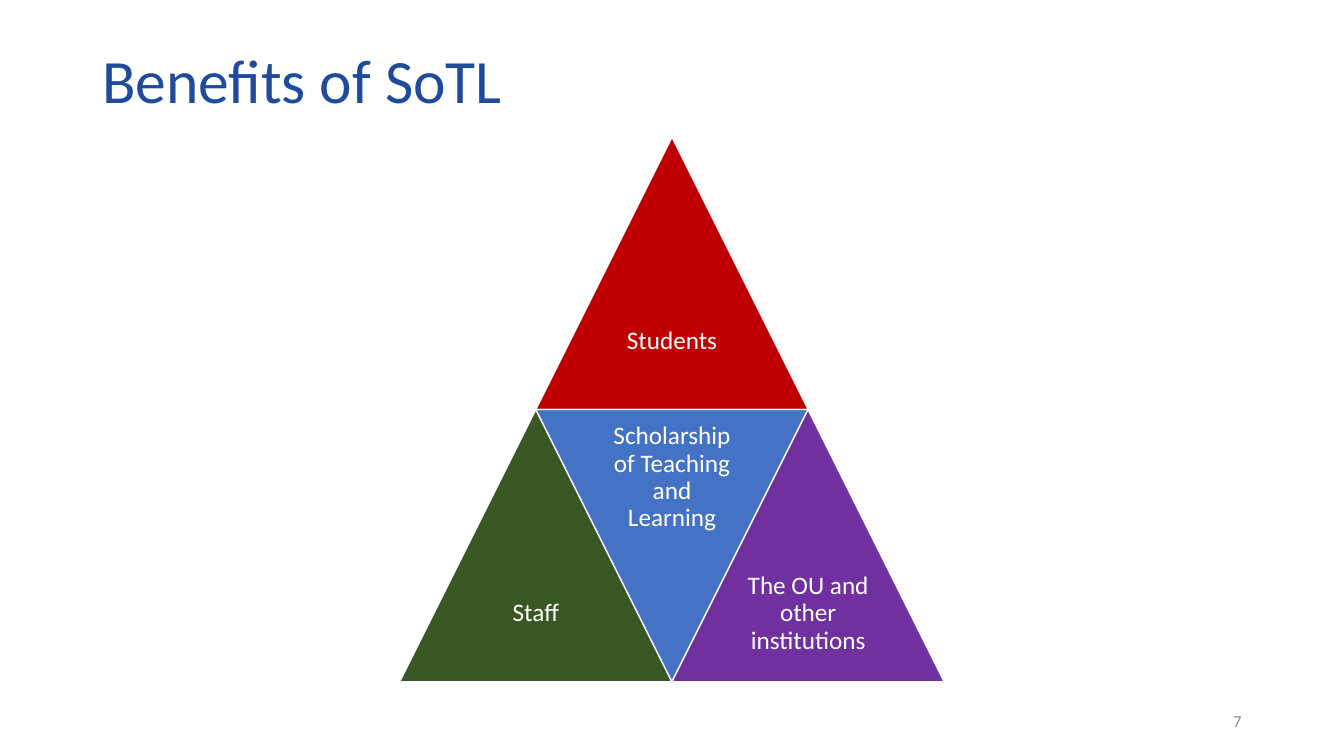
from dataclasses import dataclass

from pptx import Presentation
from pptx.dml.color import RGBColor
from pptx.enum.shapes import MSO_SHAPE as Shape
from pptx.enum.text import MSO_ANCHOR as Anchor, PP_ALIGN as Align
from pptx.util import Pt


@dataclass(frozen=True)
class Theme:
    font: str = "Calibri"
    title_size: int = 44
    label_size: int = 18
    number_size: int = 12
    title: str = "1E4B9B"
    white: str = "FFFFFF"
    number: str = "8C8C8C"
    students: str = "C00000"
    staff: str = "385723"
    scholarship: str = "4472C4"
    institutions: str = "7030A0"


THEME = Theme()


def add_text(page, box, text, size, color, align=Align.LEFT, spacing=0.9, insets=(7.2, 3.6)):
    """Place one vertically centred paragraph in box (left, top, width, height)."""
    frame = page.shapes.add_textbox(*map(Pt, box)).text_frame
    across, down = map(Pt, insets)
    frame_format = {
        "word_wrap": True, "vertical_anchor": Anchor.MIDDLE,
        "margin_left": across, "margin_right": across,
        "margin_top": down, "margin_bottom": down,
    }
    for name, value in frame_format.items():
        setattr(frame, name, value)
    para = frame.paragraphs[0]
    para.alignment, para.line_spacing = align, spacing
    span = para.add_run()
    span.text = text
    for name, value in {"name": THEME.font, "size": Pt(size)}.items():
        setattr(span.font, name, value)
    span.font.color.rgb = RGBColor.from_string(color)


def add_triangle(page, box, text, color, inverted=False):
    """Draw a triangle with its label in the widest half of the box."""
    left, top, width, height = box
    triangle = page.shapes.add_shape(Shape.ISOSCELES_TRIANGLE, *map(Pt, box))
    triangle.rotation = 180 if inverted else 0
    triangle.shadow.inherit = False
    triangle.fill.solid()
    triangle.fill.fore_color.rgb = RGBColor.from_string(color)
    triangle.line.color.rgb = RGBColor.from_string(THEME.white)
    triangle.line.width = Pt(1)
    label_top = top if inverted else top + height / 2
    label_box = (left + width / 4, label_top, width / 2, height / 2)
    add_text(page, label_box, text, THEME.label_size, THEME.white,
             Align.CENTER, insets=(5.04, 5.04))


def add_pyramid(page, box):
    """Split the box into four triangles, half its width and height each."""
    left, top, width, height = box
    # Column in quarter widths, row in half heights, label, colour, inverted
    parts = [
        (1, 0, "Students", THEME.students, False),
        (0, 1, "Staff", THEME.staff, False),
        (1, 1, "Scholarship of Teaching and Learning", THEME.scholarship, True),
        (2, 1, "The OU and other institutions", THEME.institutions, False),
    ]
    for column, row, text, color, inverted in parts:
        part_box = (left + column * width / 4, top + row * height / 2, width / 2, height / 2)
        add_triangle(page, part_box, text, color, inverted)


def build_benefits_slide(page, box):
    left, top, width, height = box
    # Title
    add_text(page, (left + 66, top + 29, width - 132, 61), "Benefits of SoTL",
             THEME.title_size, THEME.title)
    # Pyramid, centred across the page
    side = 389
    add_pyramid(page, (left + (width - side) / 2, top + 98, side, side))
    # Page number
    add_text(page, (left + width - 282, top + height - 39.5, 216, 28.8), "7",
             THEME.number_size, THEME.number, Align.RIGHT, spacing=1.0)


def main():
    deck = Presentation()
    deck.slide_width, deck.slide_height = Pt(960), Pt(540)
    page = deck.slides.add_slide(deck.slide_layouts[6])
    build_benefits_slide(page, (0, 0, 960, 540))
    deck.save("out.pptx")


if __name__ == "__main__":
    main()
